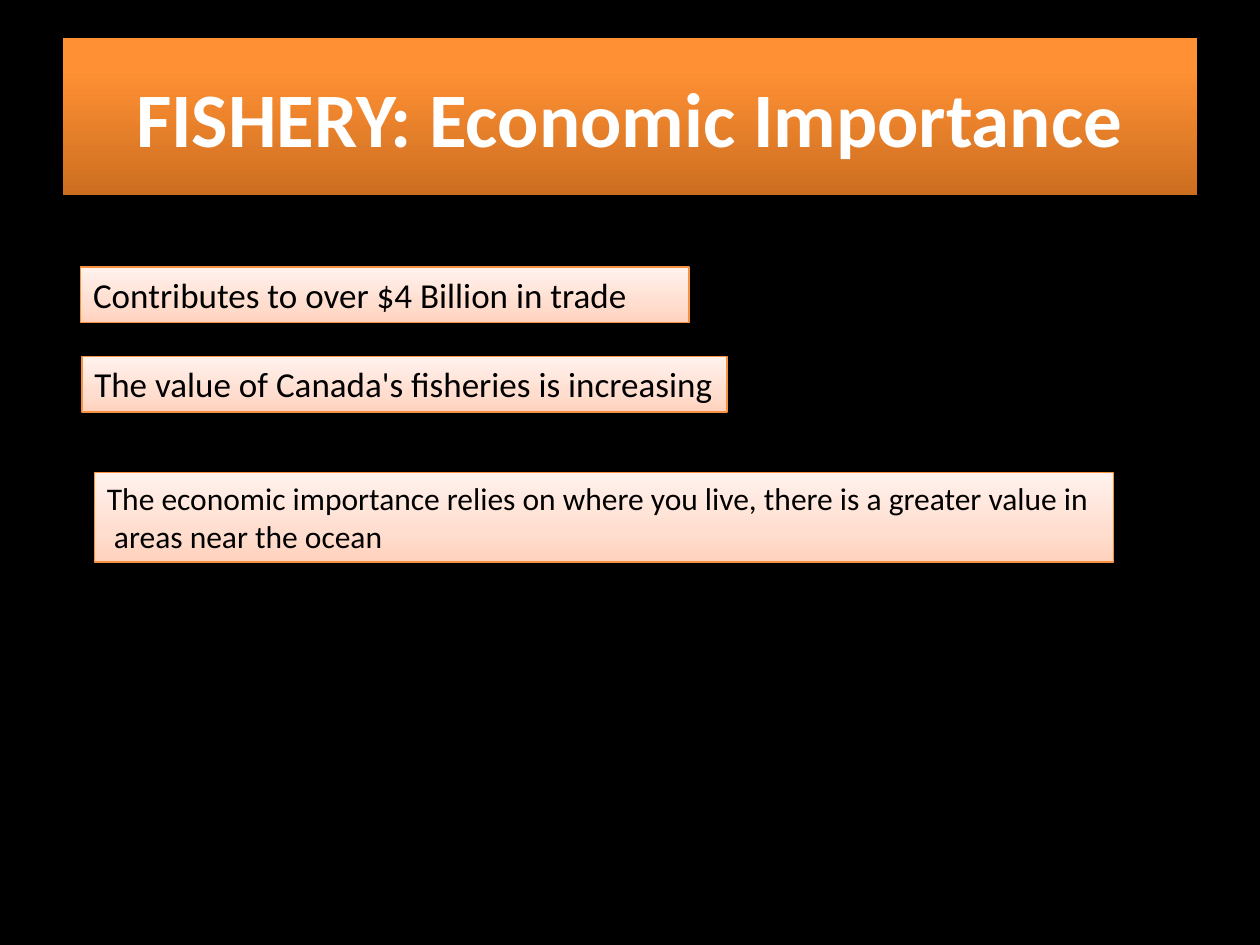
"""Build the slide on the economic importance of the fishery."""
import copy

import pptx
import pptx.dml.color
import pptx.enum.text
import pptx.oxml.ns
import pptx.util

Inches = pptx.util.Inches
Pt = pptx.util.Pt
Align = pptx.enum.text.PP_ALIGN
Anchor = pptx.enum.text.MSO_ANCHOR
Fit = pptx.enum.text.MSO_AUTO_SIZE


def tint(code):
    return pptx.dml.color.RGBColor.from_string(code)


def write(frame, text, size=20, color="000000", bold=False, align=Align.LEFT, font="Calibri"):
    frame.text = text
    for para in frame.paragraphs:
        para.alignment = align
        for run in para.runs:
            run.font.name = font
            run.font.size = Pt(size)
            run.font.bold = bold
            run.font.color.rgb = tint(color)


def shade(shape, stops):
    fill = shape.fill
    fill.gradient()
    fill.gradient_angle = 90
    group = shape.element.spPr.find(".//" + pptx.oxml.ns.qn("a:gsLst"))
    while len(group) < len(stops):
        group.append(copy.deepcopy(group[0]))
    for stop, (place, code) in zip(fill.gradient_stops, stops):
        stop.position = place
        stop.color.rgb = tint(code)


class Deck:
    orange = [(0, "CC6E20"), (0.8, "FF9034"), (1, "FF9136")]
    peach = [(0, "FFD2BD"), (0.35, "FFDED0"), (1, "FFF2ED")]
    edge = "F69240"

    def __init__(self, back):
        self.show = pptx.Presentation()
        self.show.slide_width = Inches(10)
        self.show.slide_height = Inches(7.5)
        self.slide = self.show.slides.add_slide(self.show.slide_layouts[6])
        fill = self.slide.background.fill
        fill.solid()
        fill.fore_color.rgb = tint(back)

    def panel(self, area, stops):
        shape = self.slide.shapes.add_textbox(*map(Inches, area))
        shade(shape, stops)
        return shape

    def title(self, text, area):
        frame = self.panel(area, self.orange).text_frame
        frame.word_wrap = True
        frame.vertical_anchor = Anchor.MIDDLE
        write(frame, text, size=44, color="FFFFFF", bold=True, align=Align.CENTER)

    def note(self, text, area, size=20, wrap=False):
        shape = self.panel(area, self.peach)
        shape.line.color.rgb = tint(self.edge)
        shape.line.width = Pt(0.75)
        frame = shape.text_frame
        frame.word_wrap = wrap
        frame.auto_size = Fit.SHAPE_TO_FIT_TEXT
        write(frame, text, size=size)


def main():
    deck = Deck("000000")
    deck.title("FISHERY: Economic Importance", (0.5, 0.3, 9, 1.25))
    deck.note("Contributes to over $4 Billion in trade", (0.64, 2.12, 4.83, 0.44), wrap=True)
    deck.note("The value of Canada's fisheries is increasing", (0.65, 2.83, 5.12, 0.44))
    deck.note(
        "The economic importance relies on where you live, there is a greater value in\n"
        " areas near the ocean",
        (0.75, 3.75, 8.09, 0.71),
        size=18,
    )
    deck.show.save("out.pptx")


if __name__ == "__main__":
    main()
